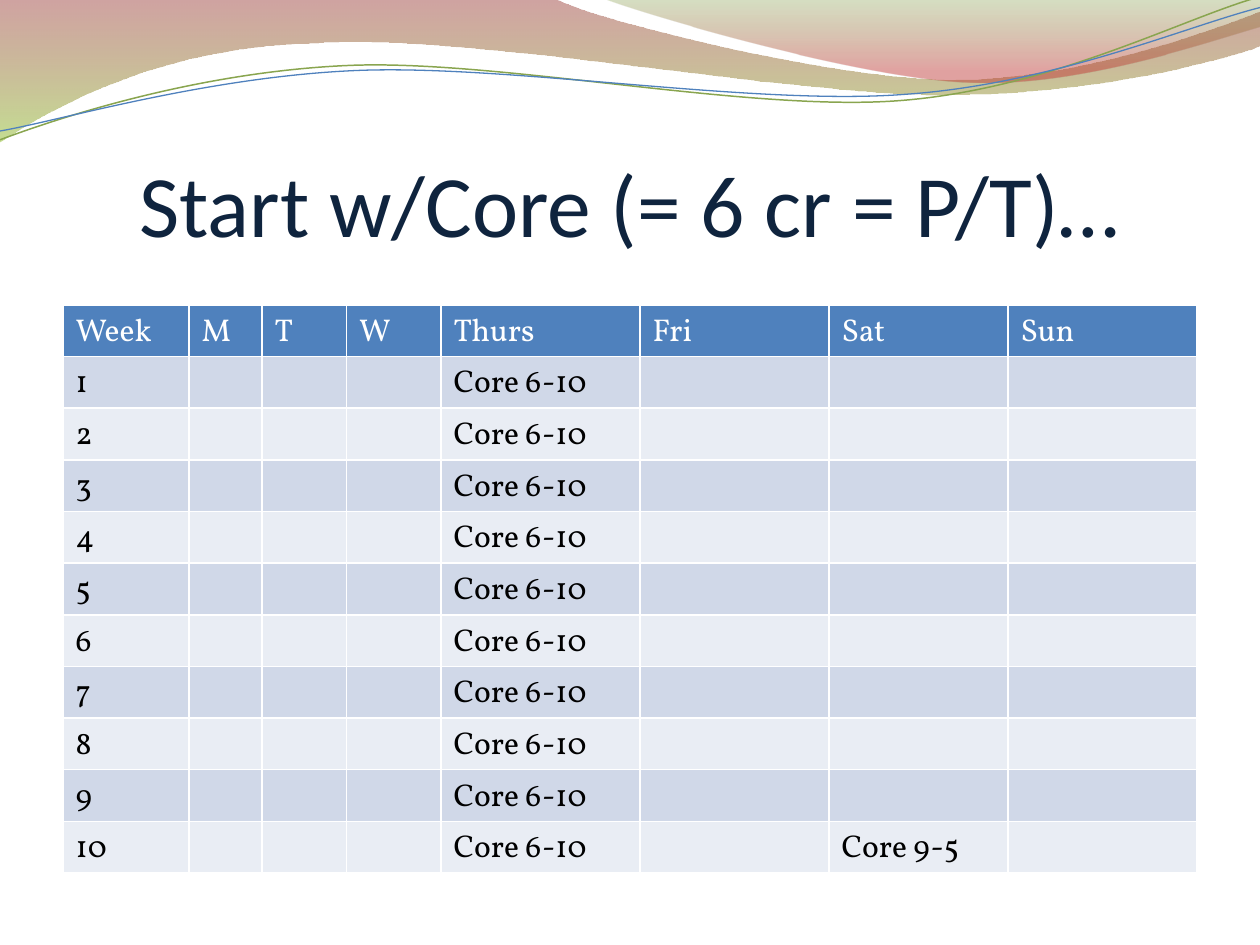
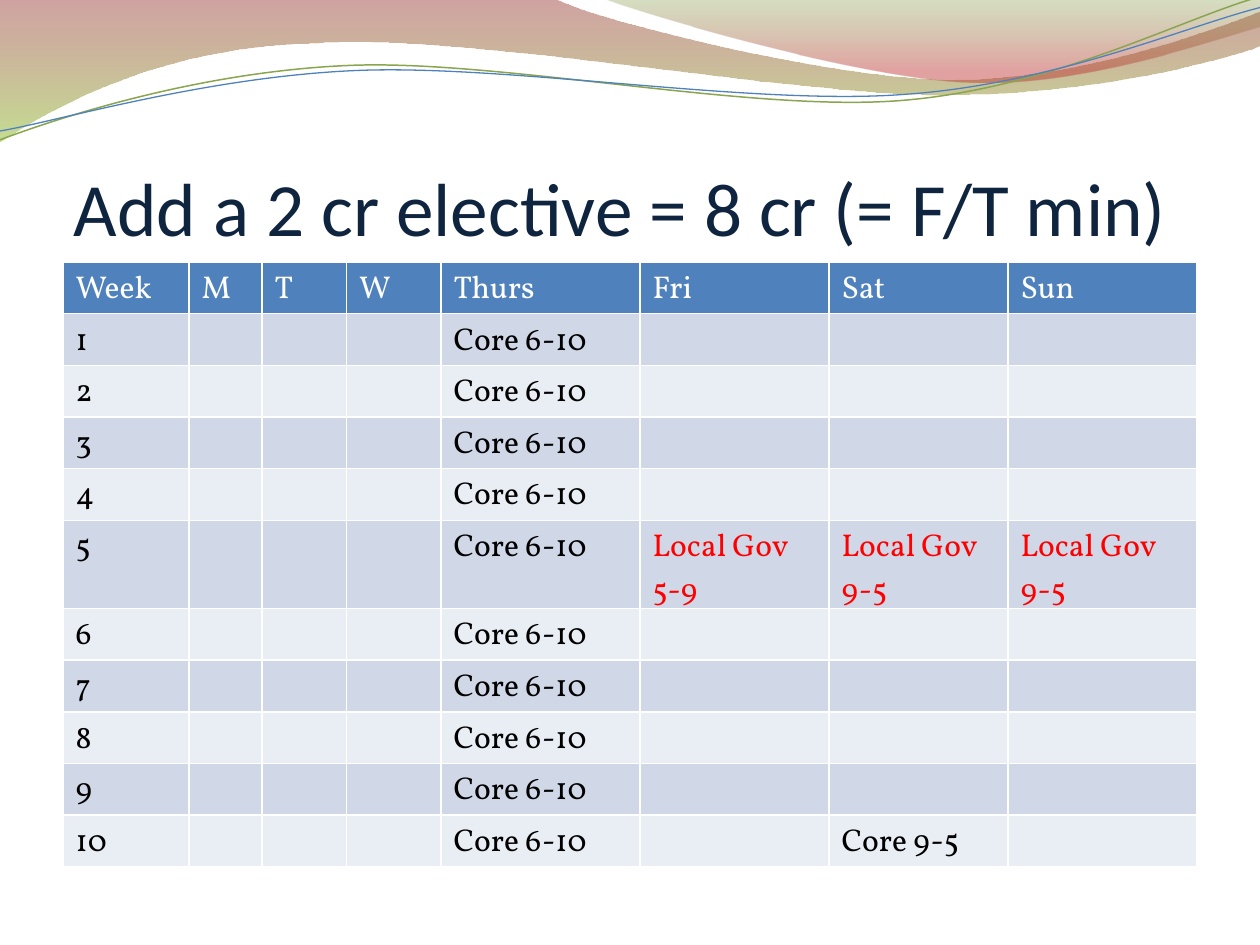
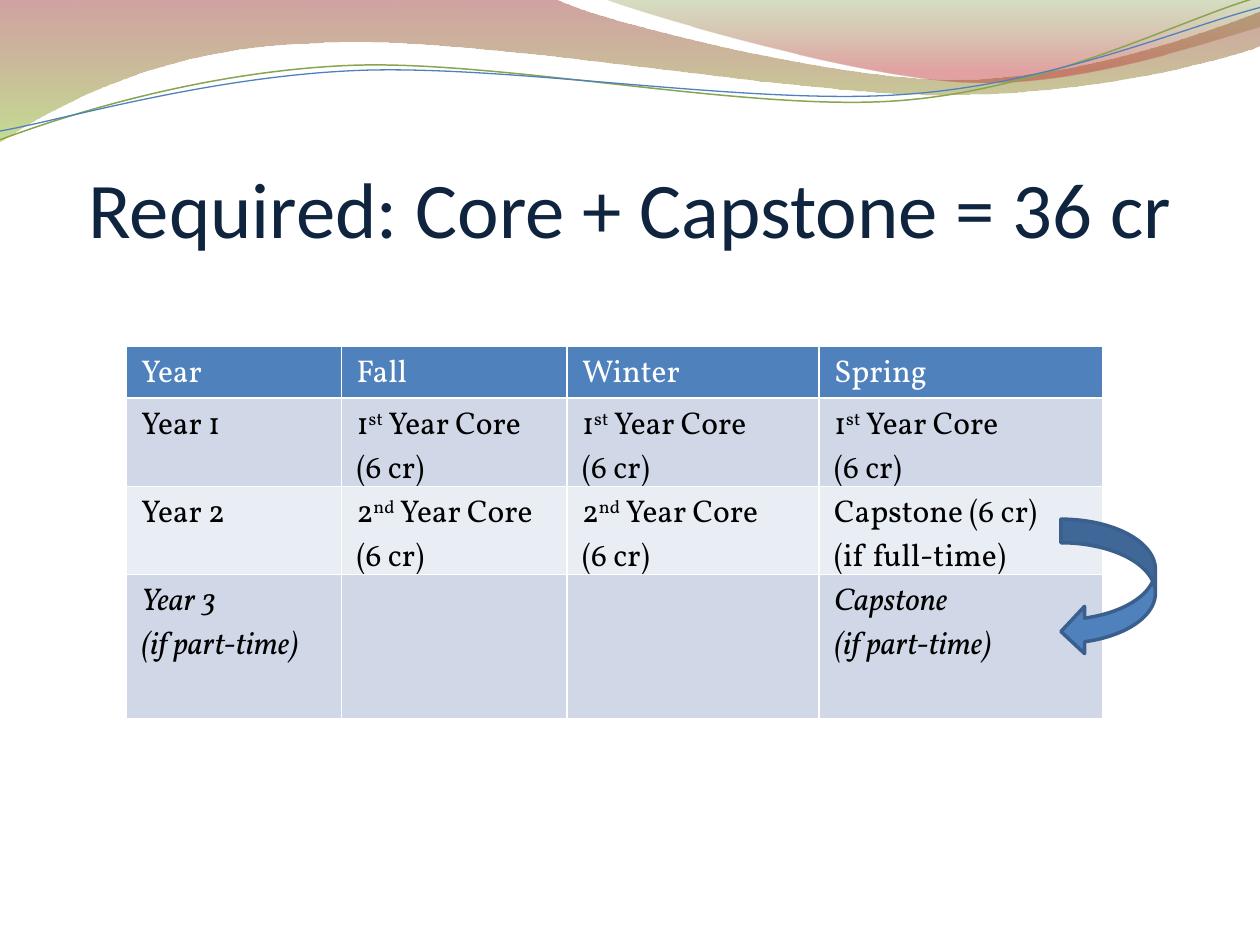
from lxml import etree
from pptx import Presentation
from pptx.dml.color import RGBColor
from pptx.enum import shapes, text
from pptx.oxml import ns
from pptx.util import Pt

PX = 9144
NAVY, BLUE, DARK_BLUE, GREEN = "0F243E", "4F81BD", "3A5F8C", "89A54F"
WHITE, BLACK, RED = "FFFFFF", "000000", "FF0000"
ROW_FILLS = ("E9EDF4", "D0D8E8")


def rgb(value):
    return RGBColor.from_string(value)


def write(frame, content, font="Vollkorn", size=18, color=BLACK, italic=False, align=None):
    for index, line in enumerate(content.split("\n")):
        paragraph = frame.add_paragraph() if index else frame.paragraphs[0]
        paragraph.alignment = align
        for part, piece in enumerate(line.split("^")):
            run = paragraph.add_run()
            run.text = piece
            run.font.name = font
            run.font.size = Pt(size)
            run.font.bold = False
            run.font.italic = italic
            run.font.color.rgb = rgb(color)
            if part % 2:
                run.font._element.set("baseline", "30000")


waves = [
    {"start": (0, 0),
     "segments": [(440, -1), (476, 17, 664, 63, 758, 63), (853, 63, 958, 26, 1000, 9), (1001, 36),
                  (983, 44, 870, 76, 746, 75), (622, 75, 382, 28, 257, 34),
                  (129, 36, 46, 83, -1, 113), (0, 0)],
     "gradient": [(0, "973330", 45), (1, "95C238", 55)]},
    {"start": (479, -1),
     "segments": [(509, 11, 682, 62, 769, 65), (856, 69, 961, 32, 1000, 21), (1000, 0), (479, -1)],
     "gradient": [(0, "769537", 30), (0.8, "BE3330", 45)]},
    {"start": (0, 111),
     "segments": [(48, 93, 158, 57, 277, 52), (395, 47, 593, 89, 713, 80),
                  (833, 71, 938, 15, 998, -2)],
     "line": (GREEN, 0.85)},
    {"start": (0, 104),
     "segments": [(47, 96, 164, 61, 283, 56), (403, 51, 597, 84, 717, 75),
                  (836, 67, 941, 21, 1000, 6)],
     "line": (BLUE, 0.75)},
]

week_header = ["Week", "M", "T", "W", "Thurs", "Fri", "Sat", "Sun"]
core_weeks = [[str(week), "", "", "", "Core 6-10", "", "", ""] for week in range(1, 11)]
core_weeks[9][6] = "Core 9-5"
elective_weeks = [list(week) for week in core_weeks]
elective_weeks[4][5:] = ["Local Gov\n5-9", "Local Gov\n9-5", "Local Gov\n9-5"]
first_core, second_core = "1^st^ Year Core\n(6 cr)", "2^nd^ Year Core\n(6 cr)"
years = [
    ["Year", "Fall", "Winter", "Spring"],
    ["Year 1"] + [first_core] * 3,
    ["Year 2"] + [second_core] * 2 + ["Capstone (6 cr)\n(if full-time)"],
    ["Year 3\n(if part-time)", "", "", "Capstone\n(if part-time)"],
]
week_columns = [100, 58, 67, 75, 158, 150, 142, 150]

pages = [
    {"title": "Start w/Core (= 6 cr = P/T)…", "size": 50, "title_at": (50, 77),
     "table_at": (50, 242), "columns": week_columns, "rows": [week_header] + core_weeks,
     "inset": 10, "last_row": 41},
    {"title": "Add a 2 cr elective = 8 cr (= F/T min)", "size": 43, "title_at": (42, 75),
     "table_at": (50, 208), "columns": week_columns, "rows": [week_header] + elective_weeks,
     "inset": 10, "last_row": 41},
    {"title": "Required: Core + Capstone = 36 cr", "size": 45, "title_at": (50, 77),
     "table_at": (100, 275), "columns": [171, 179, 200, 225], "rows": years,
     "inset": 12, "last_row": 114},
]

presentation = Presentation()
presentation.slide_width, presentation.slide_height = 1000 * PX, 750 * PX

for page in pages:
    slide = presentation.slides.add_slide(presentation.slide_layouts[6])

    for wave in waves:
        segments = wave["segments"]
        points = [pair for segment in segments for pair in zip(segment[::2], segment[1::2])]
        builder = slide.shapes.build_freeform(*wave["start"], scale=PX)
        builder.add_line_segments(points, close="gradient" in wave)
        shape = builder.convert_to_shape()
        shape.shadow.inherit = False

        steps = iter(list(shape._element.iter(ns.qn("a:lnTo"))))
        for segment in segments:
            group = [next(steps) for _ in segment[::2]]
            if len(group) == 3:
                curve = etree.Element(ns.qn("a:cubicBezTo"))
                group[0].addprevious(curve)
                for step in group:
                    curve.append(step[0])
                    step.getparent().remove(step)

        if "gradient" in wave:
            shape.line.fill.background()
            shape.fill.gradient()
            shape.fill.gradient_angle = 270
            for stop, (position, color, _) in zip(shape.fill.gradient_stops, wave["gradient"]):
                stop.position = position
                stop.color.rgb = rgb(color)
            colors = shape._element.spPr.iter(ns.qn("a:srgbClr"))
            for element, (_, _, opacity) in zip(colors, wave["gradient"]):
                etree.SubElement(element, ns.qn("a:alpha"), val=str(opacity * 1000))
        else:
            color, width = wave["line"]
            shape.fill.background()
            shape.line.color.rgb = rgb(color)
            shape.line.width = Pt(width)

    left, top = page["title_at"]
    frame = slide.shapes.add_textbox(left * PX, top * PX, 900 * PX, 125 * PX).text_frame
    frame.word_wrap = True
    frame.vertical_anchor = text.MSO_ANCHOR.BOTTOM
    frame.margin_left = frame.margin_right = frame.margin_bottom = 0
    frame.margin_top = 5 * PX
    write(frame, page["title"], font="Calibri", size=page["size"], color=NAVY,
          align=text.PP_ALIGN.CENTER)

    rows, columns = page["rows"], page["columns"]
    left, top = page["table_at"]
    table = slide.shapes.add_table(len(rows), len(columns), left * PX, top * PX,
                                   sum(columns) * PX, len(rows) * 41 * PX).table
    for column, width in zip(table.columns, columns):
        column.width = width * PX
    for row in table.rows:
        row.height = 41 * PX
    table.rows[len(rows) - 1].height = page["last_row"] * PX

    for row_index, row in enumerate(rows):
        for column_index, content in enumerate(row):
            cell = table.cell(row_index, column_index)
            cell.margin_left = cell.margin_right = page["inset"] * PX
            cell.margin_top = cell.margin_bottom = 5 * PX
            cell.fill.solid()
            cell.fill.fore_color.rgb = rgb(ROW_FILLS[row_index % 2] if row_index else BLUE)
            properties = cell._tc.get_or_add_tcPr()
            for order, side in enumerate("LRTB"):
                border = etree.Element(ns.qn(f"a:ln{side}"), w=str(Pt(1)))
                fill = etree.SubElement(border, ns.qn("a:solidFill"))
                etree.SubElement(fill, ns.qn("a:srgbClr"), val=WHITE)
                properties.insert(order, border)
            if content:
                color = WHITE if row_index == 0 else RED if "Local" in content else BLACK
                write(cell.text_frame, content, color=color, italic="part-time" in content)

arrow = slide.shapes.add_shape(shapes.MSO_SHAPE.CURVED_LEFT_ARROW,
                               842 * PX, 412 * PX, 75 * PX, 108 * PX)
arrow.shadow.inherit = False
arrow.fill.solid()
arrow.fill.fore_color.rgb = rgb(BLUE)
arrow.line.color.rgb = rgb(DARK_BLUE)
arrow.line.width = Pt(2)

presentation.save("out.pptx")
